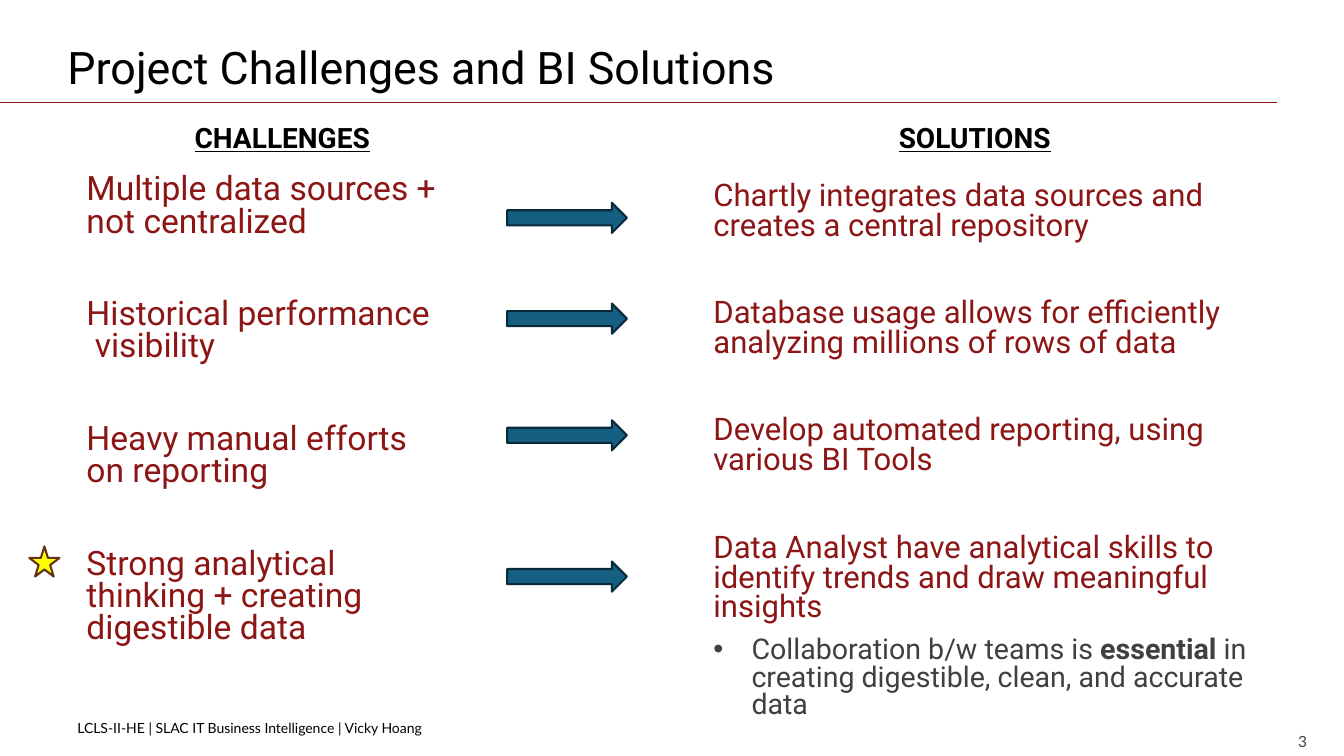
from lxml import etree
from pptx import Presentation
from pptx.dml.color import RGBColor
from pptx.enum import shapes, text
from pptx.oxml.ns import qn
from pptx.util import Cm, Pt

CARDINAL = RGBColor(0x8C, 0x15, 0x15)
BLACK = RGBColor(0x00, 0x00, 0x00)
GRAY = RGBColor(0x40, 0x40, 0x40)
BLUE = RGBColor(0x15, 0x60, 0x82)
NAVY = RGBColor(0x09, 0x2A, 0x39)
YELLOW = RGBColor(0xFF, 0xFF, 0x00)
BROWN = RGBColor(0x66, 0x32, 0x16)

CHALLENGES = [
    "Multiple data sources + not centralized",
    "Historical performance\v visibility",
    "Heavy manual efforts on reporting",
    "Strong analytical thinking + creating digestible data",
]
SOLUTIONS = [
    "Chartly integrates data sources and creates a central repository",
    "Database usage allows for efficiently analyzing millions of rows of data",
    "Develop automated reporting, using various BI Tools",
    "Data Analyst have analytical skills to identify trends and draw meaningful insights",
]

presentation = Presentation()
presentation.slide_width = Cm(33.87)
presentation.slide_height = Cm(19.05)
slide = presentation.slides.add_slide(presentation.slide_layouts[6])


def add_text(box, lines, size, color, font="Roboto", spacing=1.0, gap=0):
    """Add a wrapped text box; box is left, top, width, height in cm."""
    frame = slide.shapes.add_textbox(*map(Cm, box)).text_frame
    frame.word_wrap = True
    frame.text = "\n".join(lines)
    for index, paragraph in enumerate(frame.paragraphs):
        paragraph.line_spacing = spacing
        if index:
            paragraph.space_before = Pt(gap)
        for run in paragraph.runs:
            run.font.name = font
            run.font.size = Pt(size)
            run.font.color.rgb = color
    return frame


def add_icon(preset, box, fill, line):
    shape = slide.shapes.add_shape(preset, *map(Cm, box))
    shape.shadow.inherit = False
    shape.fill.solid()
    shape.fill.fore_color.rgb = fill
    shape.line.color.rgb = line
    shape.line.width = Pt(1.5)


# Title, rule and footer
rule = slide.shapes.add_connector(
    shapes.MSO_CONNECTOR.STRAIGHT, Cm(0), Cm(2.58), Cm(32.18), Cm(2.58))
rule.line.color.rgb = CARDINAL
rule.line.width = Pt(0.75)
etree.SubElement(rule._element.spPr, qn("a:effectLst"))

title = add_text((1.7, 0.74, 30.48, 1.75), ["Project Challenges and BI Solutions"],
                 32, BLACK, spacing=0.9)
title.margin_left = 0
title.vertical_anchor = text.MSO_ANCHOR.BOTTOM

add_text((1.7, 18.06, 29.26, 0.76),
         ["LCLS-II-HE | SLAC IT Business Intelligence | Vicky Hoang"],
         10, BLACK, font="Lato", spacing=0.9)

page_number = add_text((31.75, 18.29, 1.9, 0.76), ["3"], 11, GRAY, font="Lato")
page_number.margin_right = 0
page_number.vertical_anchor = text.MSO_ANCHOR.MIDDLE
page_number.paragraphs[0].alignment = text.PP_ALIGN.CENTER

# Column headings
for left, heading in ((4.5, "CHALLENGES"), (21.95, "SOLUTIONS")):
    paragraph = add_text((left, 2.92, 5.23, 1.12), [heading], 20, BLACK).paragraphs[0]
    paragraph.alignment = text.PP_ALIGN.CENTER
    paragraph.runs[0].font.bold = True
    paragraph.runs[0].font.underline = True

# Columns
add_text((1.93, 4.29, 9.7, 12.42), CHALLENGES, 24, CARDINAL, spacing=0.8, gap=43)
solutions = add_text((17.73, 4.47, 15.39, 13.34), SOLUTIONS, 22.2, CARDINAL,
                     spacing=0.8, gap=41.2)

collaboration = solutions.add_paragraph()
collaboration.line_spacing = 0.8
collaboration.space_before = Pt(10)
properties = collaboration._p.get_or_add_pPr()
properties.set("marL", str(Cm(0.96)))
properties.set("indent", str(-Cm(0.96)))
etree.SubElement(properties, qn("a:buFont"), typeface="Arial")
etree.SubElement(properties, qn("a:buChar"), char="•")
for words, bold in (("Collaboration b/w teams is ", False), ("essential", True),
                    (" in creating digestible, clean, and accurate data", False)):
    run = collaboration.add_run()
    run.text = words
    run.font.name = "Roboto"
    run.font.size = Pt(20.4)
    run.font.color.rgb = GRAY
    run.font.bold = bold

# Arrows from challenge to solution, and the star on the last challenge
for top in (5.11, 7.65, 10.59, 14.15):
    add_icon(shapes.MSO_SHAPE.RIGHT_ARROW, (12.78, top, 3.02, 0.76), BLUE, NAVY)
add_icon(shapes.MSO_SHAPE.STAR_5_POINT, (0.74, 13.77, 0.76, 0.76), YELLOW, BROWN)

presentation.save("out.pptx")
